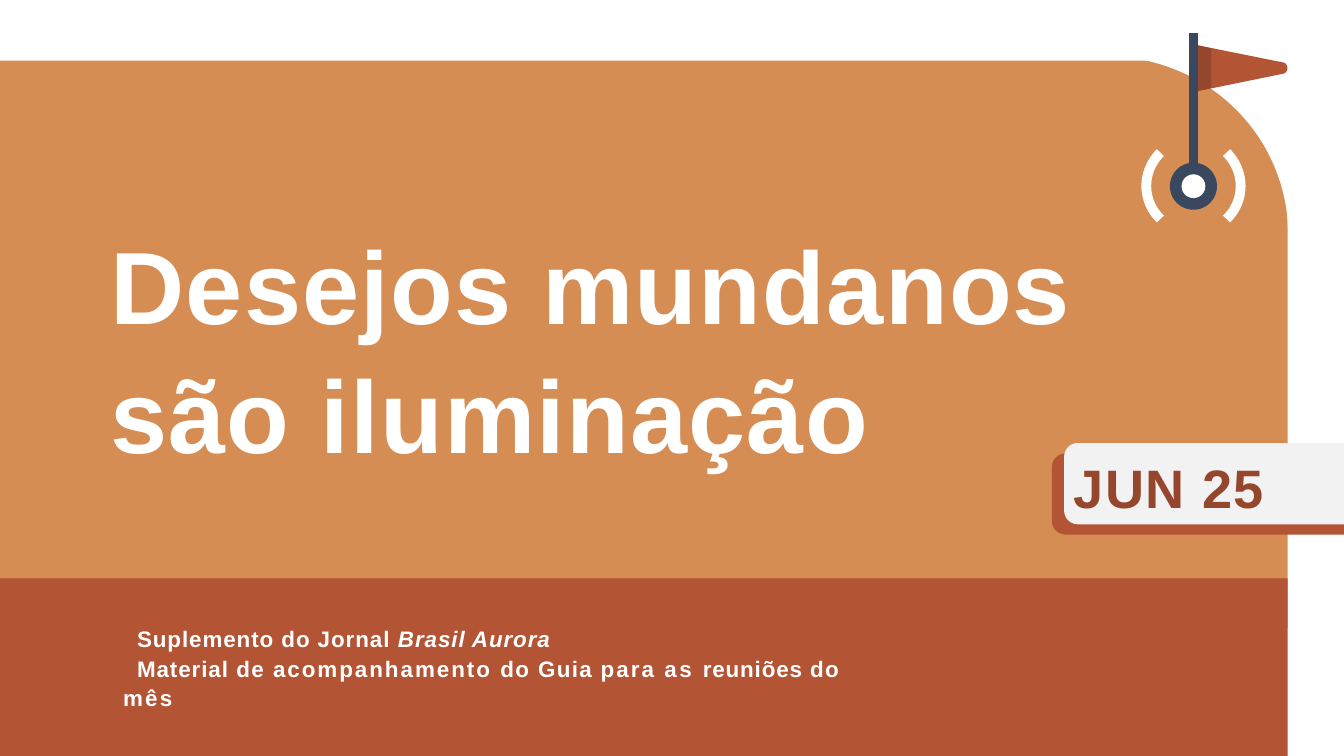
from dataclasses import dataclass
from math import cos, pi, sin

from lxml.etree import SubElement
from pptx import Presentation
from pptx.dml.color import RGBColor
from pptx.enum.shapes import MSO_CONNECTOR as Connector, MSO_SHAPE as Shape
from pptx.enum.text import MSO_ANCHOR as Anchor, MSO_AUTO_SIZE as AutoSize, PP_ALIGN as Align
from pptx.oxml.ns import qn
from pptx.slide import Slide
from pptx.util import Cm, Pt

WHITE = RGBColor(0xFF, 0xFF, 0xFF)
ORANGE = RGBColor(0xD5, 0x8D, 0x53)
BRICK = RGBColor(0xB3, 0x54, 0x35)
RUST = RGBColor(0x95, 0x47, 0x2D)
NAVY = RGBColor(0x39, 0x48, 0x5E)
PALE = RGBColor(0xF2, 0xF2, 0xF2)

POLE_X, PIN_Y = 45.11, 7.04
FLAG_TOP, FLAG_BOTTOM = 1.68, 3.48


def curve(start, control_1, control_2, end, steps=24):
    points = []
    for step in range(steps + 1):
        t = step / steps
        weights = ((1 - t) ** 3, 3 * t * (1 - t) ** 2, 3 * t * t * (1 - t), t ** 3)
        anchors = (start, control_1, control_2, end)
        points.append(tuple(sum(w * a[axis] for w, a in zip(weights, anchors)) for axis in (0, 1)))
    return points


def quarter_arc(center_x, center_y, radius_x, radius_y, steps=60):
    angles = [pi / 2 * (1 - step / steps) for step in range(steps + 1)]
    return [(center_x + radius_x * cos(a), center_y - radius_y * sin(a)) for a in angles]


@dataclass
class Cover:
    page: Slide
    font: str = "Arial"
    stroke: float = 10.48

    def paint(self, shape, color):
        shape.shadow.inherit = False
        shape.fill.solid()
        shape.fill.fore_color.rgb = color
        shape.line.fill.background()
        return shape

    def block(self, kind, left, top, width, height, color, rotation=0):
        shape = self.page.shapes.add_shape(kind, Cm(left), Cm(top), Cm(width), Cm(height))
        shape.rotation = rotation
        return self.paint(shape, color)

    def disc(self, x, y, radius, color):
        self.block(Shape.OVAL, x - radius, y - radius, 2 * radius, 2 * radius, color)

    def outline(self, points, closed):
        places = [(Cm(x), Cm(y)) for x, y in points]
        builder = self.page.shapes.build_freeform(*places[0], scale=1.0)
        builder.add_line_segments(places[1:], close=closed)
        return builder.convert_to_shape()

    def polygon(self, points, color):
        self.paint(self.outline(points, True), color)

    def arc(self, points, color):
        shape = self.outline(points, False)
        shape.shadow.inherit = False
        shape.fill.background()
        shape.line.color.rgb = color
        shape.line.width = Pt(self.stroke)

    def line(self, x1, y1, x2, y2, color):
        connector = self.page.shapes.add_connector(
            Connector.STRAIGHT, Cm(x1), Cm(y1), Cm(x2), Cm(y2))
        connector.line.color.rgb = color
        connector.line.width = Pt(self.stroke)
        SubElement(connector._element.spPr, qn("a:effectLst"))

    def text(self, box, place, paragraphs, size, color, indent=0.0, spacing=1.0,
             anchor=Anchor.TOP, insets=(0, 0.03, 0, 0)):
        box.left, box.top, box.width, box.height = (Cm(value) for value in place)
        box._element.getparent().append(box._element)
        frame = box.text_frame
        frame.word_wrap = True
        frame.auto_size = AutoSize.SHAPE_TO_FIT_TEXT
        frame.vertical_anchor = anchor
        frame.margin_left, frame.margin_top, frame.margin_right, frame.margin_bottom = (
            Cm(value) for value in insets)
        for index, spans in enumerate(paragraphs):
            para = frame.add_paragraph() if index else frame.paragraphs[0]
            para.alignment = Align.LEFT
            para.line_spacing = spacing
            para.space_before = Pt(0.9)
            properties = para._p.get_or_add_pPr()
            properties.set("marL", str(Cm(0.03)))
            properties.set("indent", str(Cm(indent)))
            for words, tracking, italic in spans:
                span = para.add_run()
                span.text = words
                span.font.name = self.font
                span.font.size = Pt(size)
                span.font.bold = True
                span.font.italic = italic
                span.font.color.rgb = color
                span._r.get_or_add_rPr().set("spc", str(round(tracking * 100)))


def draw_flag(cover):
    cover.disc(POLE_X, PIN_Y, 0.89, NAVY)
    tip = curve((48.49, 2.79), (48.72, 2.74), (48.72, 2.41), (48.49, 2.36))
    mast = [(POLE_X, FLAG_TOP), (POLE_X, FLAG_BOTTOM)]
    cover.polygon(mast + tip, BRICK)
    cover.polygon(mast + [(45.78, 3.33), (45.78, 1.83)], RUST)
    cover.line(POLE_X, PIN_Y, POLE_X, 1.24, NAVY)
    cover.disc(POLE_X, PIN_Y, 0.45, WHITE)
    for side in (-1, 1):
        near, far = POLE_X + side * 1.25, POLE_X + side * 1.96
        cover.arc(curve((near, 5.77), (far, 6.48), (far, 7.59), (near, 8.28)), WHITE)


def main():
    deck = Presentation()
    deck.slide_width, deck.slide_height = Cm(50.8), Cm(28.58)
    page = deck.slides.add_slide(deck.slide_layouts[0])
    cover = Cover(page)

    cover.block(Shape.RECTANGLE, -0.15, 2.29, 48.82, 21.46, ORANGE)
    cover.polygon(quarter_arc(41.83, 8.86, 6.86, 6.73) + [(48.69, 2.13)], WHITE)
    draw_flag(cover)
    cover.block(Shape.ROUNDED_RECTANGLE, 44.17, 12.73, 3.07, 11.89, BRICK, 90)
    cover.block(Shape.RECTANGLE, -0.15, 21.87, 48.82, 6.71, BRICK)
    cover.block(Shape.ROUNDED_RECTANGLE, 44.4, 12.57, 3.07, 11.43, PALE, 90)

    cover.text(page.shapes.title, (4.14, 8.31, 39.65, 9.47),
               [[("Desejos mundanos são iluminação", 1.4, False)]],
               110, WHITE, spacing=1.04, anchor=Anchor.MIDDLE)
    date_box = page.shapes.add_textbox(0, 0, 0, 0)
    cover.text(date_box, (39.75, 16.99, 9.98, 2.57), [[("JUN 25", 1.4, False)]],
               58, RUST, indent=0.81, spacing=1.07)
    material = [("Material ", 1), ("de ", 1.6), ("acompanhamento ", 2.1), ("do ", 1.5),
                ("Guia ", 1.4), ("para ", 2.2), ("as ", 2.6), ("reuniões ", 0.9),
                ("do ", 1.5), ("mês", 2.5)]
    cover.text(page.placeholders[1], (4.37, 23.42, 28.85, 2.41),
               [[("Suplemento do Jornal ", 1, False), ("Brasil Aurora", 1, True)],
                [(words, tracking, False) for words, tracking in material]],
               24, WHITE, indent=0.53, spacing=1.08, insets=(0.25, 0.13, 0.25, 0.13))

    deck.save("out.pptx")


if __name__ == "__main__":
    main()
